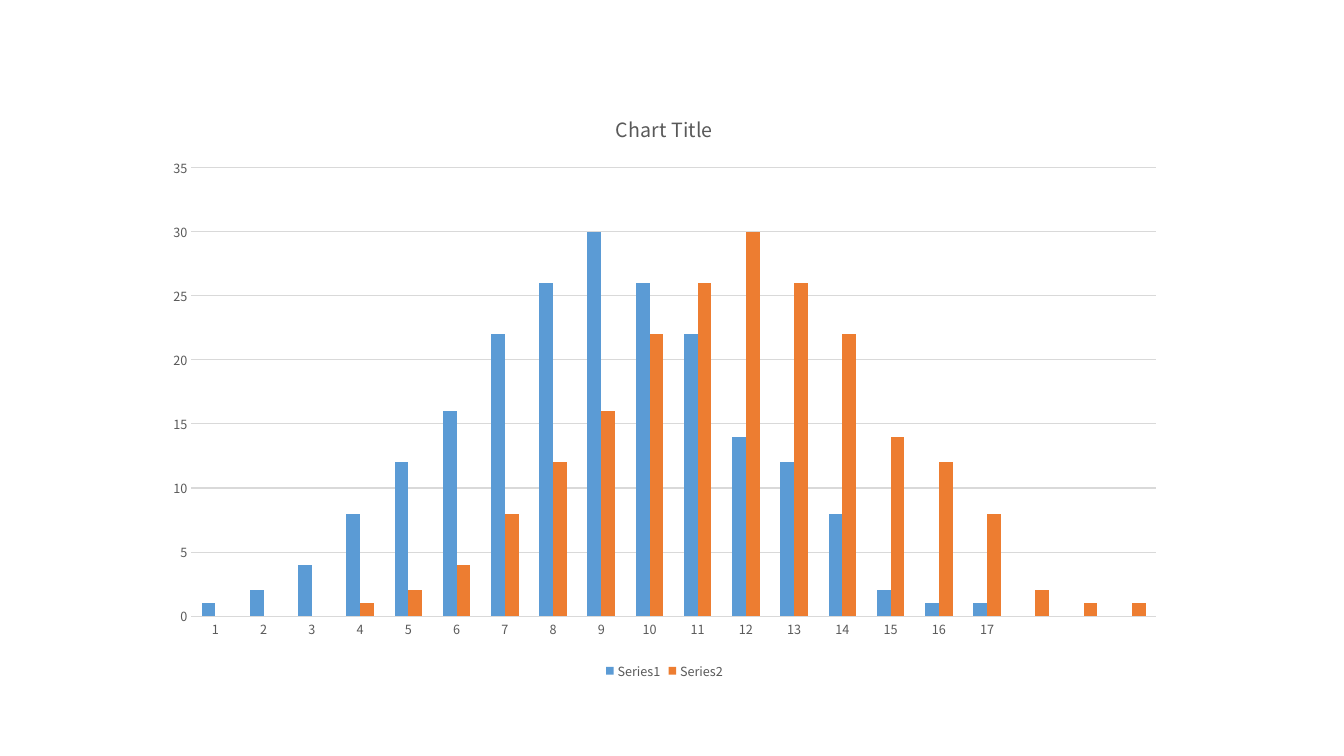
from lxml.etree import SubElement
from pptx import Presentation
from pptx.chart.data import CategoryChartData
from pptx.dml.color import RGBColor
from pptx.enum.chart import XL_CHART_TYPE, XL_LEGEND_POSITION, XL_TICK_MARK
from pptx.oxml.ns import qn
from pptx.util import Cm, Pt

COLORS = {"first": "5B9BD5", "second": "ED7D31", "text": "595959", "grid": "D9D9D9"}
FREQUENCIES = (1, 2, 4, 8, 12, 16, 22, 26, 30, 26, 22, 14, 12, 8, 2, 1, 1)
SHIFT = 3
PLOT_AREA = {"x": 0.038, "y": 0.13, "w": 0.942, "h": 0.756}


class SlideBuilder:
    font_name = "Noto Sans CJK JP"

    def __init__(self, page):
        self.page = page

    def color(self, name):
        return RGBColor.from_string(COLORS[name])

    def style_font(self, font, size):
        font.name = self.font_name
        font.size = Pt(size)
        font.bold = False
        font.color.rgb = self.color("text")

    def add_column_chart(self, data, left, top, width, height):
        frame = self.page.shapes.add_chart(
            XL_CHART_TYPE.COLUMN_CLUSTERED, left, top, width, height, data
        )
        chart = frame.chart
        self.style_font(chart.font, 10)
        plot = chart.plots[0]
        plot.vary_by_categories = False
        plot.gap_width = 150
        plot.overlap = 0
        for series, name in zip(plot.series, ("first", "second")):
            series.format.fill.solid()
            series.format.fill.fore_color.rgb = self.color(name)
        return chart

    def add_title(self, chart, text):
        para = chart.chart_title.text_frame.paragraphs[0]
        span = para.add_run()
        span.text = text
        self.style_font(span.font, 14)
        chart.chart_title.include_in_layout = False

    def add_legend(self, chart):
        chart.has_legend = True
        chart.legend.position = XL_LEGEND_POSITION.BOTTOM
        chart.legend.include_in_layout = False
        self.style_font(chart.legend.font, 9)

    def style_axes(self, chart):
        for axis in (chart.category_axis, chart.value_axis):
            axis.major_tick_mark = XL_TICK_MARK.NONE
            axis.minor_tick_mark = XL_TICK_MARK.NONE
            axis.format.line.fill.background()
            self.style_font(axis.tick_labels.font, 9)
        chart.category_axis.has_major_gridlines = False
        values = chart.value_axis
        values.minimum_scale, values.maximum_scale, values.major_unit = 0, 35, 5
        values.has_major_gridlines = True
        grid = values.major_gridlines.format.line
        grid.width = Pt(0.75)
        grid.color.rgb = self.color("grid")

    def place_plot(self, chart, area):
        plot_area = chart.plots[0].series[0].format.fill and chart.element.find(
            ".//" + qn("c:plotArea")
        )
        layout = plot_area.find(qn("c:layout"))
        if layout is None:
            layout = SubElement(plot_area, qn("c:layout"))
            plot_area.insert(0, layout)
        manual = SubElement(layout, qn("c:manualLayout"))
        settings = {"layoutTarget": "inner", "xMode": "edge", "yMode": "edge", **area}
        for name, value in settings.items():
            SubElement(manual, qn("c:" + name)).set("val", str(value))


def main():
    deck = Presentation()
    deck.slide_width, deck.slide_height = Cm(33.87), Cm(19.05)
    page = deck.slides.add_slide(deck.slide_layouts[6])
    builder = SlideBuilder(page)

    gap = (None,) * SHIFT
    data = CategoryChartData()
    data.categories = [str(number + 1) for number in range(len(FREQUENCIES))] + [""] * SHIFT
    data.add_series("Series1", FREQUENCIES + gap)
    data.add_series("Series2", gap + FREQUENCIES)

    chart = builder.add_column_chart(data, Cm(3.84), Cm(2.29), Cm(25.81), Cm(14.94))
    builder.add_title(chart, "Chart Title")
    builder.add_legend(chart)
    builder.style_axes(chart)
    builder.place_plot(chart, PLOT_AREA)
    deck.save("out.pptx")


if __name__ == "__main__":
    main()
